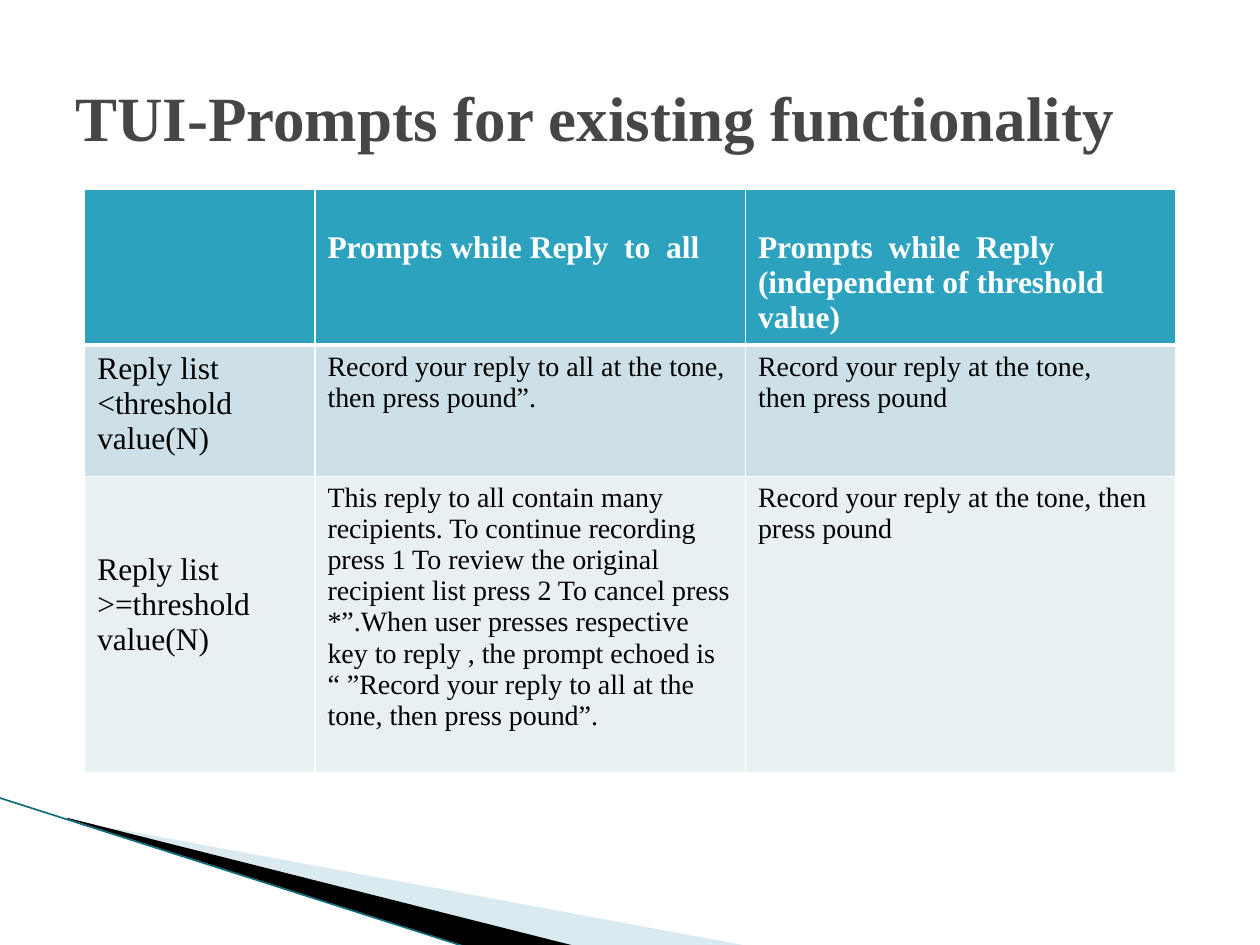
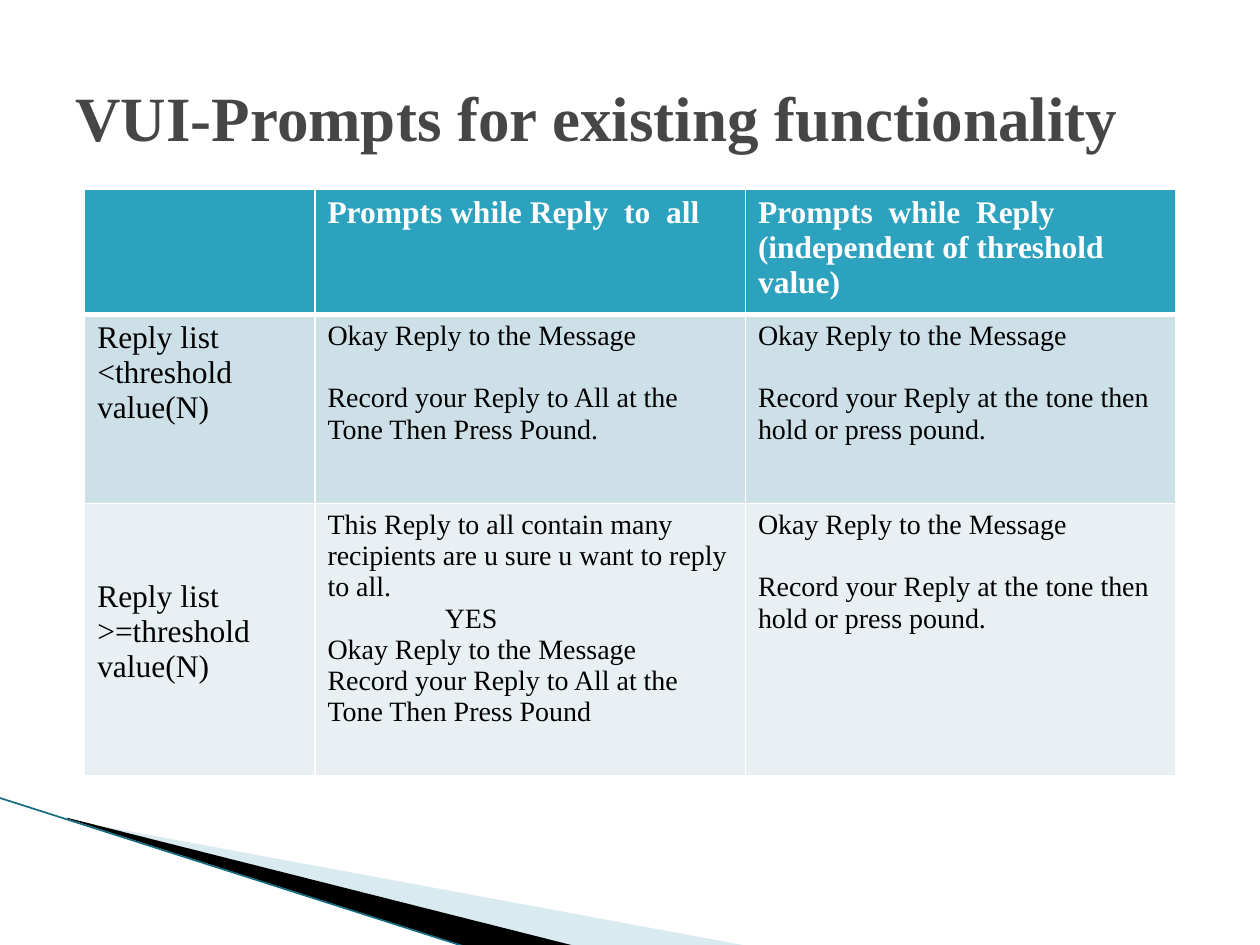
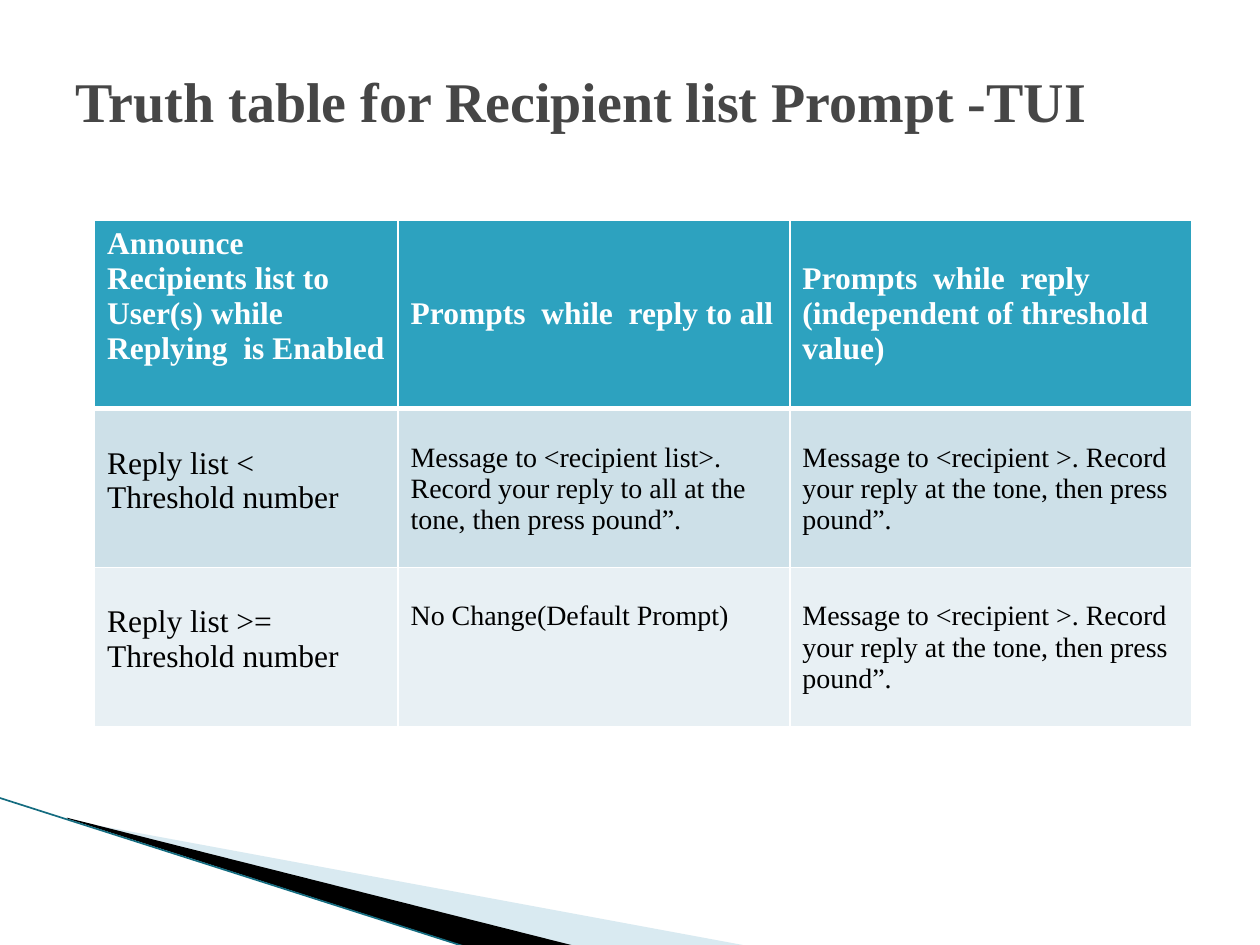
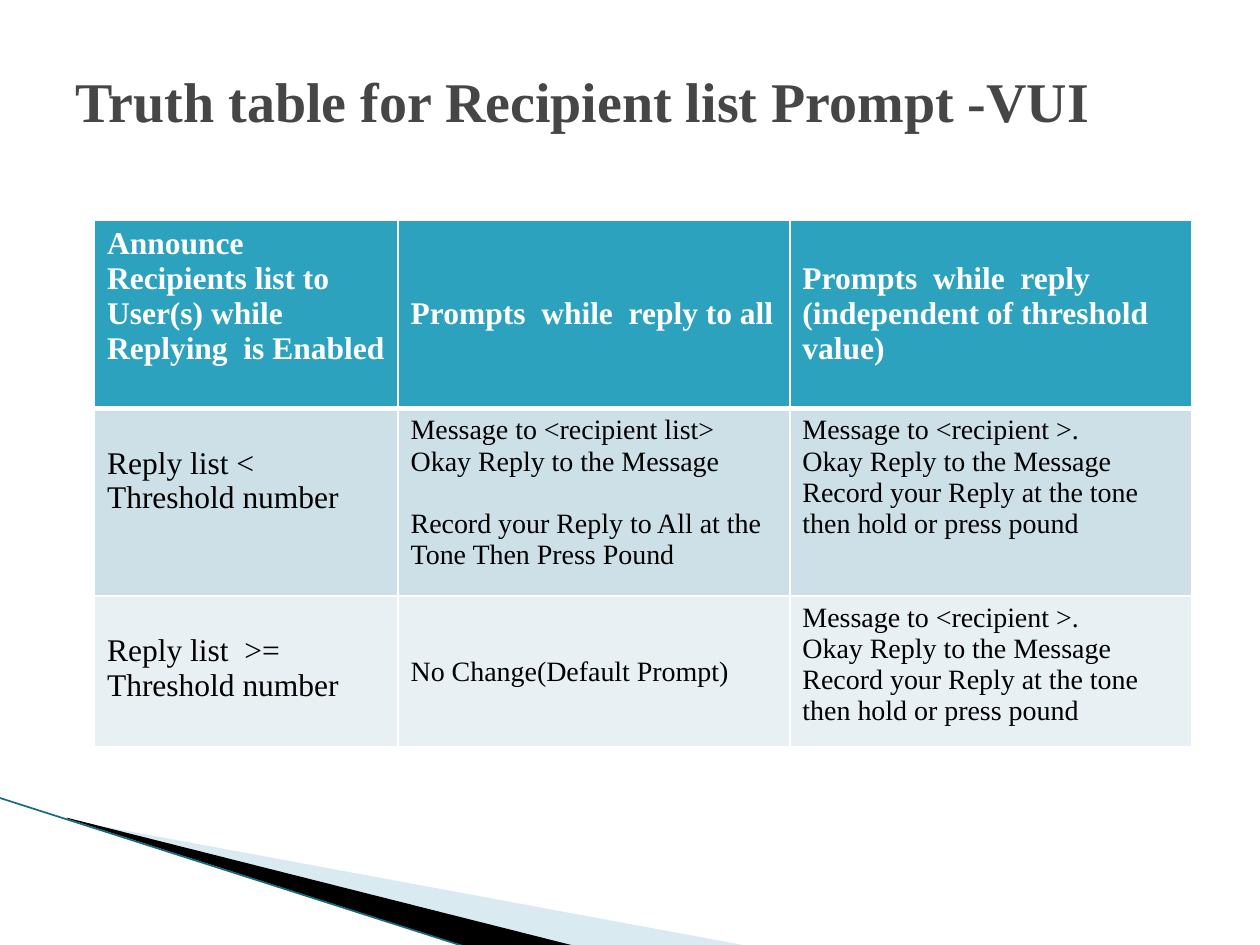
"""Build four slides of reply prompt tables."""
from lxml import etree
from pptx import Presentation
from pptx.dml.color import RGBColor
from pptx.enum import shapes, text
from pptx.oxml import ns
from pptx.util import Pt

HUES = {
    "title": "464646", "head": "2DA2BF", "odd": "CDE0E8", "even": "E8F0F4",
    "white": "FFFFFF", "black": "000000", "pale": "A0CBDC", "edge": "146C80",
}
FACE = "Times New Roman"
HEAD, BODY = 18, 16
LEAD = 1.11
INSET = 3.6

REPLY_HEAD = ["Prompts  while  Reply", "(independent of threshold value)"]
ALL_HEAD = "Prompts while Reply  to  all"
BELOW = "Reply list <threshold value(N)"
ABOVE = "Reply list >=threshold value(N)"
OKAY = "Okay Reply to the Message"
VOICE_ALL = "Record your Reply to All at the Tone Then Press Pound"
VOICE_ONE = "Record your Reply at the tone then hold or press pound"
NAMED = "Message to <recipient >. Record your reply at the tone, then press pound”."
NUMBER = "Threshold number"
DEFAULT = "No Change(Default Prompt)"


def hue(name):
    """Return the named colour."""
    return RGBColor.from_string(HUES[name])


def down(lines, *sizes):
    """Lower a cell's lines by the height of lines of the given sizes."""
    return lines, LEAD * sum(sizes)


def gap(line):
    """Set a line apart from the one above."""
    return line, LEAD * BODY, 0


def push(line, left):
    """Indent a line."""
    return line, 0, left


def style(para, size, name, bold):
    """Set a paragraph's font."""
    font = para.font
    font.name, font.size, font.bold = FACE, Pt(size), bold
    font.color.rgb = hue(name)


def child(node, tag, **attrs):
    """Add a drawing element under a node."""
    return etree.SubElement(node, ns.qn("a:" + tag), **attrs)


def wedge(slide, points, name, alpha=None):
    """Draw a filled outline in the corner."""
    points = [(Pt(x), Pt(y)) for x, y in points]
    form = slide.shapes.build_freeform(*points[0])
    form.add_line_segments(points[1:])
    shape = form.convert_to_shape()
    shape.shadow.inherit = False
    shape.line.fill.background()
    shape.fill.solid()
    shape.fill.fore_color.rgb = hue(name)
    if alpha:
        tint = shape.fill._xPr.find(".//" + ns.qn("a:srgbClr"))
        child(tint, "alpha", val=str(alpha * 1000))


def corner(slide):
    """Draw the shared corner motif."""
    wedge(slide, [(39.6, 468.7), (428.4, 540.7), (328.3, 540.7), (39.6, 468)],
          "pale", 40)
    wedge(slide, [(38.2, 467.3), (329, 540.7), (267.8, 541.4), (38.9, 468)],
          "black")
    line = slide.shapes.add_connector(
        shapes.MSO_CONNECTOR.STRAIGHT, Pt(-0.7), Pt(455.8), Pt(267.1), Pt(541.4))
    line.line.color.rgb = hue("edge")
    line.line.width = Pt(0.95)
    child(line._element.spPr, "effectLst")


def title(slide, words, top, size):
    """Add the slide title."""
    box = slide.shapes.add_textbox(Pt(36), Pt(top), Pt(648), Pt(90))
    frame = box.text_frame
    frame.word_wrap = True
    frame.vertical_anchor = text.MSO_ANCHOR.MIDDLE
    para = frame.paragraphs[0]
    para.text = words
    style(para, size, "title", True)


def border(cell, row):
    """Rule a cell in white, heavier under the header."""
    props = cell._tc.get_or_add_tcPr()
    widths = {"L": 1, "R": 1, "T": 3 if row == 1 else 1, "B": 1 if row else 3}
    for side, width in widths.items():
        line = child(props, "ln" + side, w=str(Pt(width)))
        child(child(line, "solidFill"), "srgbClr", val=HUES["white"])


def fill(cell, item, row, col):
    """Write and colour one cell."""
    border(cell, row)
    cell.fill.solid()
    cell.fill.fore_color.rgb = hue(("head", "odd", "even")[row])
    lines, drop = item if isinstance(item, tuple) else (item, 0)
    cell.margin_top = Pt(round(INSET + drop, 2))
    lines = [lines] if isinstance(lines, str) else lines
    frame = cell.text_frame
    for num, line in enumerate(lines):
        words, before, left = line if isinstance(line, tuple) else (line, 0, 0)
        para = frame.paragraphs[0] if num == 0 else frame.add_paragraph()
        para.text = words
        if before:
            para.space_before = Pt(round(before, 2))
        if left:
            para._p.get_or_add_pPr().set("marL", str(Pt(left)))
        style(para, BODY if row and col else HEAD,
              "black" if row else "white", row == 0)


def grid(slide, left, top, cols, rows, cells):
    """Add a table of prompts."""
    frame = slide.shapes.add_table(len(rows), len(cols), Pt(left), Pt(top),
                                   Pt(sum(cols)), Pt(sum(rows)))
    table = frame.table
    table.first_row = table.horz_banding = False
    for col, width in enumerate(cols):
        table.columns[col].width = Pt(width)
    for row, height in enumerate(rows):
        table.rows[row].height = Pt(height)
        for col, item in enumerate(cells[row]):
            fill(table.cell(row, col), item, row, col)


def page(deck):
    """Add a blank slide with the corner motif."""
    slide = deck.slides.add_slide(deck.slide_layouts[6])
    corner(slide)
    return slide


def prompts(deck, kind, rows, cells):
    """Add a slide of existing prompts."""
    slide = page(deck)
    grid(slide, 48.4, 108.2, (131.6, 246, 246), rows, cells)
    title(slide, f"{kind}-Prompts for existing functionality", 21.6, 36)


def truth(deck, kind, rows, cells):
    """Add a truth table slide."""
    slide = page(deck)
    head = ["Announce Recipients list to User(s) while Replying  is Enabled",
            down("Prompts  while  reply to all", HEAD, HEAD),
            down("Prompts  while  reply (independent of threshold value)", HEAD)]
    grid(slide, 54, 126, (173.5, 223.9, 229.7), rows, [head] + cells)
    title(slide, f"Truth table for Recipient list Prompt -{kind}", 12.2, 32)


def main():
    """Build and save the deck."""
    deck = Presentation()
    deck.slide_width, deck.slide_height = Pt(720), Pt(540)
    above = down(ABOVE, HEAD, HEAD)
    low = down(["Reply list <", NUMBER], 16)
    prompts(deck, "TUI", (89, 75, 169.5), [
        ["", down(ALL_HEAD, HEAD), down(REPLY_HEAD, HEAD)],
        [BELOW,
         "Record your reply to all at the tone, then press pound”.",
         ["Record your reply at the tone,", "then press pound"]],
        [above,
         "This reply to all contain many recipients. To continue recording "
         "press 1 To review the original recipient list press 2 To cancel "
         "press *”.When user presses respective key to reply , the prompt "
         "echoed is “ ”Record your reply to all at the tone, then press "
         "pound”.",
         "Record your reply at the tone, then press pound"]])
    voice = [OKAY, gap(VOICE_ONE + ".")]
    prompts(deck, "VUI", (71.5, 108, 155.5), [
        ["", ALL_HEAD, REPLY_HEAD],
        [BELOW, [OKAY, gap(VOICE_ALL + ".")], voice],
        [above,
         ["This Reply to all contain many recipients are u sure u want to "
          "reply to all.", push("YES", 67), OKAY, VOICE_ALL],
         voice]])
    truth(deck, "TUI", (107.5, 90.8, 90.8), [
        [low,
         down("Message to <recipient list>. Record your reply to all at the "
              "tone, then press pound”.", 14),
         down(NAMED, 14)],
        [down(["Reply list >=", NUMBER], 16), down(DEFAULT, 14),
         down(NAMED, 14)]])
    voice = ["Message to <recipient >.", OKAY, VOICE_ONE]
    truth(deck, "VUI", (107.5, 107, 86.5), [
        [low, ["Message to <recipient list>", OKAY, gap(VOICE_ALL)], voice],
        [down(["Reply list  >=", NUMBER], 16), down(DEFAULT, 14, 14), voice]])
    deck.save("out.pptx")


if __name__ == "__main__":
    main()
